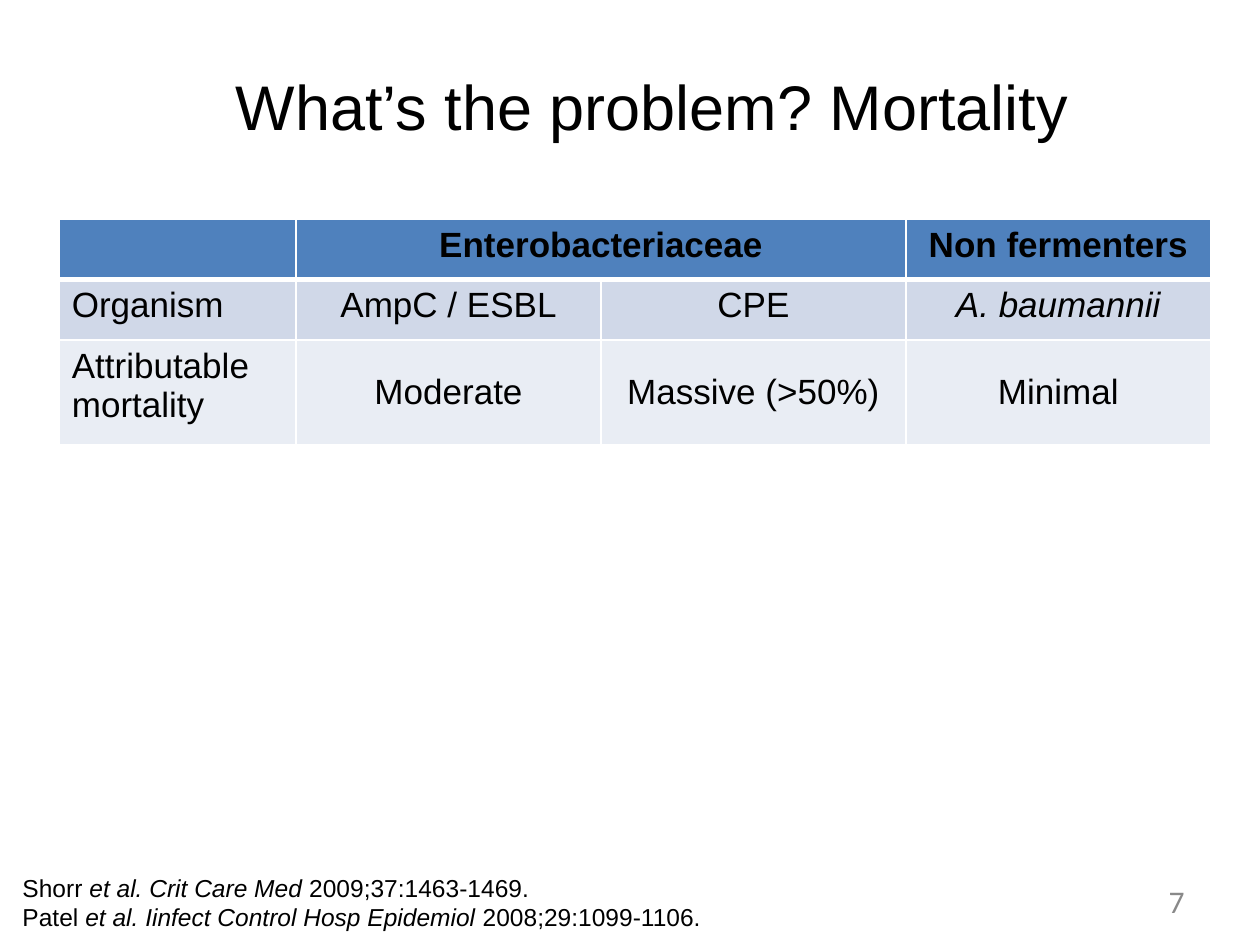
from lxml.etree import SubElement as Sub
from pptx import Presentation
from pptx.dml.color import RGBColor as RGB
from pptx.enum.text import MSO_ANCHOR as Anchor, PP_ALIGN as Align
from pptx.oxml.ns import qn
from pptx.util import Inches, Pt

INK = {"text": "000000", "page": "898989", "line": "FFFFFF",
       "head": "4F81BD", "dark": "D0D8E8", "light": "E9EDF4"}


def write(frame, text, size=20, font="Arial", color="text", bold=False,
          italic=False, align=Align.LEFT, anchor=Anchor.TOP, hang=0):
    """Fill a frame; lines split on newlines, *stars* toggle italics."""
    frame.word_wrap = True
    frame.vertical_anchor = anchor
    for i, line in enumerate(text.split("\n")):
        para = frame.add_paragraph() if i else frame.paragraphs[0]
        para.alignment = align
        if hang:
            props = para._p.get_or_add_pPr()
            props.set("marL", str(Inches(hang)))
            props.set("indent", str(-Inches(hang)))
        for j, part in enumerate(line.split("*")):
            run = para.add_run()
            run.text = part
            run.font.size = Pt(size)
            run.font.name = font
            run.font.bold = bold
            run.font.italic = italic or j % 2 == 1
            run.font.color.rgb = RGB.from_string(INK[color])


def edge(cell, widths):
    """Draw the left, right, top and bottom borders of a cell."""
    props = cell._tc.get_or_add_tcPr()
    for i, (side, width) in enumerate(zip("LRTB", widths)):
        line = props.makeelement(qn(f"a:ln{side}"), {"w": str(Pt(width))})
        fill = Sub(line, qn("a:solidFill"))
        Sub(fill, qn("a:srgbClr"), val=INK["line"])
        props.insert(i, line)


deck = Presentation()
deck.slide_width, deck.slide_height = Inches(10), Inches(7.5)
slide = deck.slides.add_slide(deck.slide_layouts[6])
shapes = slide.shapes

# Mortality table
rows = [["", "Enterobacteriaceae", "", "Non fermenters"],
        ["Organism", "AmpC / ESBL", "CPE", "*A. baumannii*"],
        ["Attributable mortality", "Moderate", "Massive (>50%)", "Minimal"]]
fills = ["head", "dark", "light"]
table = shapes.add_table(3, 4, Inches(0.47), Inches(1.74),
                         Inches(9.14), Inches(1.79)).table
for col, width in zip(table.columns, [1.88, 2.42, 2.42, 2.42]):
    col.width = Inches(width)
for row, height in zip(table.rows, [0.48, 0.48, 0.83]):
    row.height = Inches(height)
table.cell(0, 1).merge(table.cell(0, 2))

for r, row in enumerate(rows):
    for c, text in enumerate(row):
        cell = table.cell(r, c)
        cell.fill.solid()
        cell.fill.fore_color.rgb = RGB.from_string(INK[fills[r]])
        edge(cell, [1, 1, 3 if r == 1 else 1, 3 if r == 0 else 1])
        if text:
            write(cell.text_frame, text, bold=r == 0,
                  align=Align.CENTER if c or r == 0 else Align.LEFT)
        if r == 2 and c:
            cell.vertical_anchor = Anchor.MIDDLE

# References, title and page number
refs = ("Shorr *et al. Crit Care Med *2009;37:1463-1469.\n"
        "Patel *et al. Iinfect Control Hosp Epidemiol *2008;29:1099-1106.")
notes = [
    ((0.08, 6.88, 6.02, 0.57), refs, dict(size=14, hang=0.38)),
    ((0.17, 0.21, 10.01, 1.25), "What’s the problem? Mortality",
     dict(size=36, align=Align.CENTER, anchor=Anchor.MIDDLE)),
    ((7.17, 6.95, 2.33, 0.4), "7",
     dict(size=18, font="Calibri", color="page", align=Align.RIGHT,
          anchor=Anchor.MIDDLE)),
]
for place, text, style in notes:
    box = shapes.add_textbox(*[Inches(n) for n in place])
    write(box.text_frame, text, **style)

deck.save("out.pptx")
